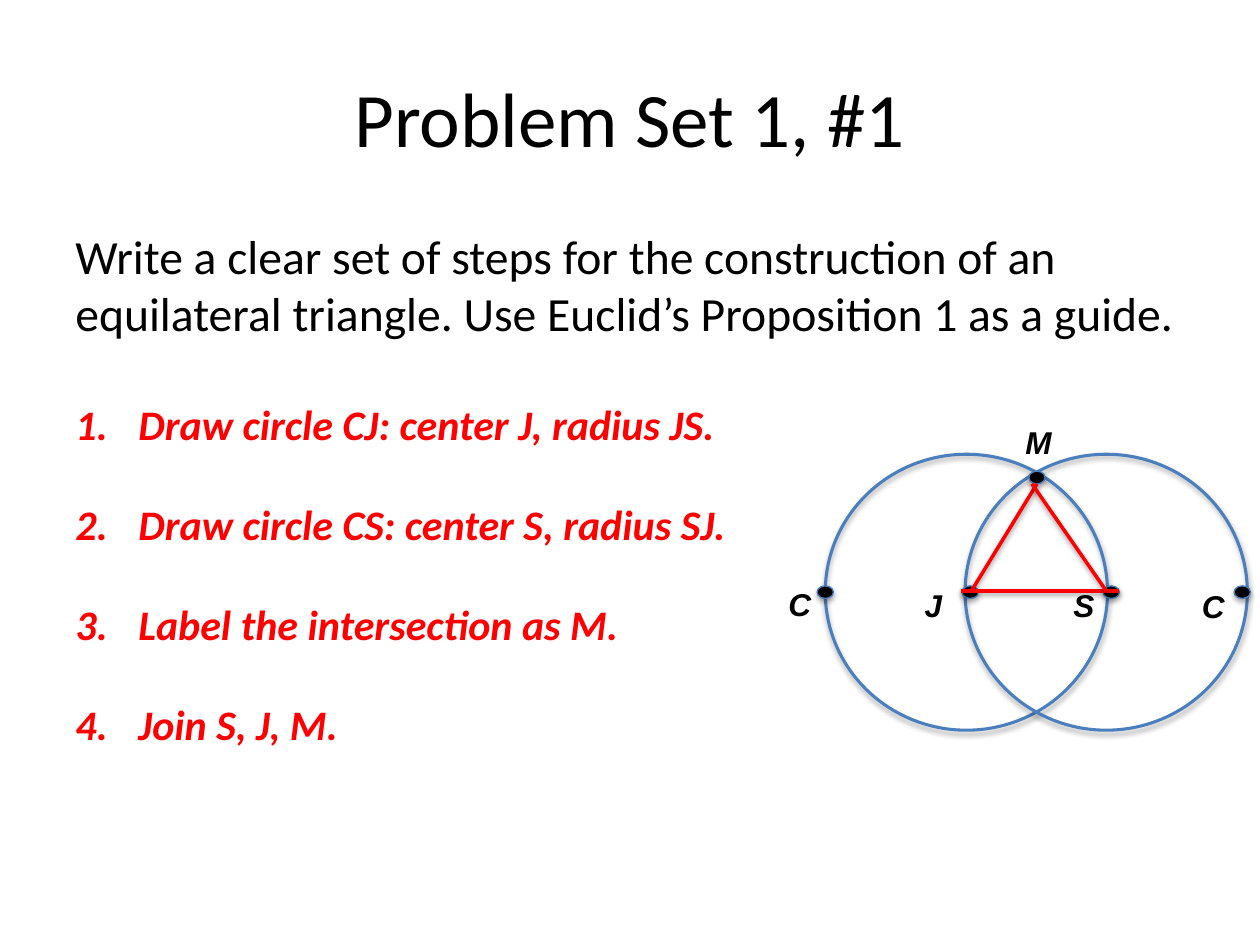
from pptx import Presentation
from pptx.dml.color import RGBColor
from pptx.enum.shapes import MSO_CONNECTOR, MSO_SHAPE
from pptx.enum.text import MSO_ANCHOR, PP_ALIGN
from pptx.oxml import parse_xml
from pptx.oxml.ns import nsdecls
from pptx.util import Inches, Pt

BLACK = RGBColor(0x00, 0x00, 0x00)
RED = RGBColor(0xFF, 0x00, 0x00)
BLUE = RGBColor(0x4B, 0x7E, 0xBC)


def add_text(p, text, size=18, font="Calibri", color=BLACK, bold=False, italic=False):
    r = p.add_run()
    r.text = text
    r.font.size = Pt(size)
    r.font.name = font
    r.font.color.rgb = color
    r.font.bold = bold
    r.font.italic = italic


class SlideBuilder:
    label_style = dict(size=18, font="Arial", bold=True, italic=True)
    step_style = dict(size=24, color=RED, bold=True, italic=True)

    def __init__(self, slide):
        self.s = slide

    def frame(self, x, y, w, h, anchor=MSO_ANCHOR.TOP):
        sp = self.s.shapes.add_textbox(Inches(x), Inches(y), Inches(w), Inches(h))
        tf = sp.text_frame
        tf.word_wrap = True
        tf.vertical_anchor = anchor
        return tf

    def text(self, text, x, y, w, h, align=PP_ALIGN.LEFT, anchor=MSO_ANCHOR.TOP, **style):
        p = self.frame(x, y, w, h, anchor).paragraphs[0]
        p.alignment = align
        add_text(p, text, **style)

    def label(self, text, x, y):
        self.text(text, x, y, 0.5, 0.4, **self.label_style)

    def steps(self, items, x, y, w, h):
        tf = self.frame(x, y, w, h)
        for i, item in enumerate(items):
            p = tf.paragraphs[0] if i == 0 else tf.add_paragraph()
            p.space_after = Pt(28.5)
            pPr = p._p.get_or_add_pPr()
            pPr.set("marL", str(Inches(0.5)))
            pPr.set("indent", str(-Inches(0.5)))
            pPr.append(parse_xml(f'<a:buFont {nsdecls("a")} typeface="+mj-lt"/>'))
            pPr.append(parse_xml(f'<a:buAutoNum {nsdecls("a")} type="arabicPeriod"/>'))
            add_text(p, item, **self.step_style)

    def shadow(self, sp, dist, alpha):
        sp._element.spPr.append(parse_xml(
            f'<a:effectLst {nsdecls("a")}>'
            f'<a:outerShdw blurRad="{Pt(3.1)}" dist="{Pt(dist)}" dir="5400000" rotWithShape="0">'
            f'<a:srgbClr val="000000"><a:alpha val="{alpha * 1000}"/></a:srgbClr>'
            '</a:outerShdw></a:effectLst>'))

    def ellipse(self, cx, cy, w, h, line_width, fill=None):
        sp = self.s.shapes.add_shape(
            MSO_SHAPE.OVAL, Inches(cx - w / 2), Inches(cy - h / 2), Inches(w), Inches(h))
        if fill is None:
            sp.fill.background()
        else:
            sp.fill.solid()
            sp.fill.fore_color.rgb = fill
        sp.line.color.rgb = BLUE
        sp.line.width = Pt(line_width)
        self.shadow(sp, 1.8, 35)

    def circle(self, cx, cy):
        self.ellipse(cx, cy, 2.24, 2.19, 1.75)

    def dot(self, cx, cy):
        self.ellipse(cx, cy, 0.13, 0.1, 0.75, BLACK)

    def side(self, x1, y1, x2, y2):
        c = self.s.shapes.add_connector(
            MSO_CONNECTOR.STRAIGHT, Inches(x1), Inches(y1), Inches(x2), Inches(y2))
        c.line.color.rgb = RED
        c.line.width = Pt(2)
        self.shadow(c, 1.6, 38)


def main():
    prs = Presentation()
    prs.slide_width = Inches(10)
    prs.slide_height = Inches(7.5)
    b = SlideBuilder(prs.slides.add_slide(prs.slide_layouts[6]))

    b.text("Problem Set 1, #1", 0.5, 0.3, 9, 1.25,
           align=PP_ALIGN.CENTER, anchor=MSO_ANCHOR.MIDDLE, size=44)
    b.text("Write a clear set of steps for the construction of an equilateral triangle. "
           "Use Euclid’s Proposition 1 as a guide.", 0.5, 1.75, 9, 0.84, size=27.2)
    b.steps(["Draw circle CJ: center J, radius JS.",
             "Draw circle CS: center S, radius SJ.",
             "Label the intersection as M.",
             "Join S, J, M."], 0.5, 3.11, 5.5, 3.53)

    for cx in (7.67, 8.78):
        b.circle(cx, 4.7)
    for cx, cy in ((6.55, 4.7), (7.7, 4.7), (8.82, 4.7), (9.86, 4.7), (8.23, 3.79)):
        b.dot(cx, cy)
    for text, x, y in (("J", 7.24, 4.6), ("S", 8.42, 4.6), ("C", 6.16, 4.59),
                       ("C", 9.44, 4.61), ("M", 8.04, 3.31)):
        b.label(text, x, y)
    for ends in ((8.23, 3.84, 7.71, 4.69), (8.88, 4.69, 7.63, 4.69), (8.78, 4.69, 8.19, 3.84)):
        b.side(*ends)

    prs.save("out.pptx")


if __name__ == "__main__":
    main()
